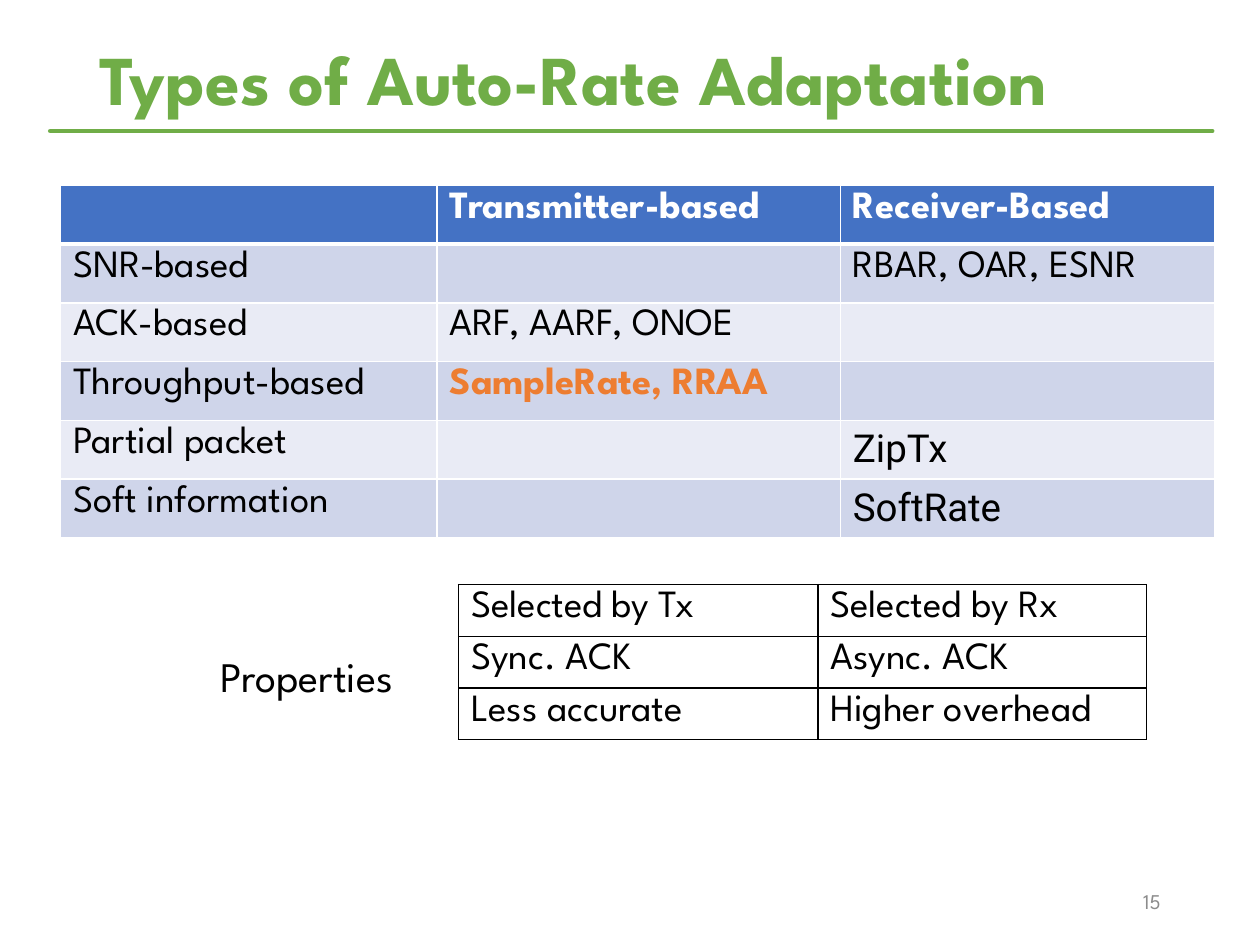
from dataclasses import dataclass

from lxml import etree
from pptx import Presentation
from pptx.dml.color import RGBColor
from pptx.enum.shapes import MSO_CONNECTOR
from pptx.enum.text import MSO_ANCHOR, MSO_AUTO_SIZE, PP_ALIGN
from pptx.oxml.ns import qn
from pptx.slide import Slide
from pptx.util import Inches, Pt

LINE = MSO_CONNECTOR.STRAIGHT
MIDDLE = MSO_ANCHOR.MIDDLE
TOP = MSO_ANCHOR.TOP
LEFT, RIGHT = PP_ALIGN.LEFT, PP_ALIGN.RIGHT
FIXED, GROW = MSO_AUTO_SIZE.NONE, MSO_AUTO_SIZE.SHAPE_TO_FIT_TEXT

BLACK = RGBColor(0x00, 0x00, 0x00)
WHITE = RGBColor(0xFF, 0xFF, 0xFF)
GREEN = RGBColor(0x70, 0xAD, 0x47)
GREY = RGBColor(0x8C, 0x8C, 0x8C)
BLUE = RGBColor(0x44, 0x72, 0xC4)
ORANGE = RGBColor(0xED, 0x7D, 0x31)
BANDS = (RGBColor(0xCF, 0xD5, 0xEA), RGBColor(0xE9, 0xEB, 0xF5))

SPARTAN, ROBOTO = "League Spartan", "Roboto"


@dataclass(frozen=True)
class Style:
    size: float
    color: RGBColor = BLACK
    bold: bool = False
    font: str = SPARTAN


@dataclass(frozen=True)
class Grid:
    left: float
    top: float
    widths: tuple[float, ...]
    height: float
    rows: tuple[tuple[str, ...], ...]
    edge: RGBColor
    banded: bool = False


@dataclass(frozen=True)
class Label:
    text: str
    box: tuple[float, float, float, float]
    style: Style
    align: PP_ALIGN = LEFT
    anchor: MSO_ANCHOR = TOP
    wrap: bool = True


BODY = Style(22)
HEAD = Style(22, WHITE, True)
SPECIAL = {
    "SampleRate, RRAA": Style(22, ORANGE, True),
    "ZipTx": Style(22, font=ROBOTO),
    "SoftRate": Style(22, font=ROBOTO),
}

TYPES = Grid(0.48, 1.47, (2.99, 3.2, 2.97), 2.8 / 6, (
    ("", "Transmitter-based", "Receiver-Based"),
    ("SNR-based", "", "RBAR, OAR, ESNR"),
    ("ACK-based", "ARF, AARF, ONOE", ""),
    ("Throughput-based", "SampleRate, RRAA", ""),
    ("Partial packet", "", "ZipTx"),
    ("Soft information", "", "SoftRate"),
), WHITE, banded=True)

TRAITS = Grid(3.64, 4.64, (2.85, 2.61), 0.41, (
    ("Selected by Tx", "Selected by Rx"),
    ("Sync. ACK", "Async. ACK"),
    ("Less accurate", "Higher overhead"),
), BLACK)

LABELS = (
    Label("Properties", (1.65, 5.11, 1.65, 0.5), Style(24), wrap=False),
    Label("15", (7.06, 6.95, 2.25, 0.4), Style(12, GREY), RIGHT, MIDDLE),
)


def write(frame, text: str, style: Style) -> None:
    frame.text = text
    for run in frame.paragraphs[0].runs:
        run.font.name = style.font
        run.font.size = Pt(style.size)
        run.font.bold = style.bold
        run.font.color.rgb = style.color


def add_edge(cell, side: str, color: RGBColor, width: float) -> None:
    """Append one cell border; call in the order L, R, T, B before any fill."""
    edge = etree.SubElement(cell._tc.get_or_add_tcPr(), qn(f"a:ln{side}"),
                            w=str(Pt(width)))
    fill = etree.SubElement(edge, qn("a:solidFill"))
    etree.SubElement(fill, qn("a:srgbClr"), val=str(color))


def add_grid(slide: Slide, grid: Grid) -> None:
    count = len(grid.rows)
    table = slide.shapes.add_table(
        count, len(grid.widths), Inches(grid.left), Inches(grid.top),
        Inches(sum(grid.widths)), Inches(grid.height * count)).table
    table.first_row = table.horz_banding = grid.banded
    for column, width in zip(table.columns, grid.widths):
        column.width = Inches(width)
    for r, texts in enumerate(grid.rows):
        table.rows[r].height = Inches(grid.height)
        head = grid.banded and r == 0
        for c, text in enumerate(texts):
            cell = table.cell(r, c)
            write(cell.text_frame, text, HEAD if head else SPECIAL.get(text, BODY))
            for side in "LRTB":
                thick = grid.banded and (r, side) in ((0, "B"), (1, "T"))
                add_edge(cell, side, grid.edge, 3 if thick else 1)
            if grid.banded:
                cell.fill.solid()
                cell.fill.fore_color.rgb = BLUE if head else BANDS[(r - 1) % 2]
            else:
                cell.fill.background()


def add_label(slide: Slide, label: Label) -> None:
    frame = slide.shapes.add_textbox(*map(Inches, label.box)).text_frame
    write(frame, label.text, label.style)
    frame.word_wrap = label.wrap
    frame.auto_size = FIXED if label.wrap else GROW
    frame.vertical_anchor = label.anchor
    frame.paragraphs[0].alignment = label.align


def set_title(slide: Slide, text: str) -> None:
    title = slide.shapes.title
    title.left, title.top = Inches(0.69), Inches(0.29)
    title.width, title.height = Inches(8.62), Inches(0.74)
    frame = title.text_frame
    write(frame, text, Style(40, GREEN, True))
    frame.auto_size = FIXED
    frame.vertical_anchor = MIDDLE
    frame.paragraphs[0].alignment = LEFT
    frame.paragraphs[0].line_spacing = 0.9


def add_rule(slide: Slide) -> None:
    rule = slide.shapes.add_connector(
        LINE, Inches(0.4), Inches(1.04), Inches(9.62), Inches(1.04))
    rule.line.color.rgb = GREEN
    rule.line.width = Pt(2.75)
    rule.line._ln.set("cap", "rnd")
    etree.SubElement(rule._element.spPr, qn("a:effectLst"))


def main() -> None:
    deck = Presentation()
    deck.slide_width, deck.slide_height = Inches(10), Inches(7.5)
    slide = deck.slides.add_slide(deck.slide_layouts[5])
    add_rule(slide)
    set_title(slide, "Types of Auto-Rate Adaptation")
    for grid in (TRAITS, TYPES):
        add_grid(slide, grid)
    for label in LABELS:
        add_label(slide, label)
    deck.save("out.pptx")


if __name__ == "__main__":
    main()
